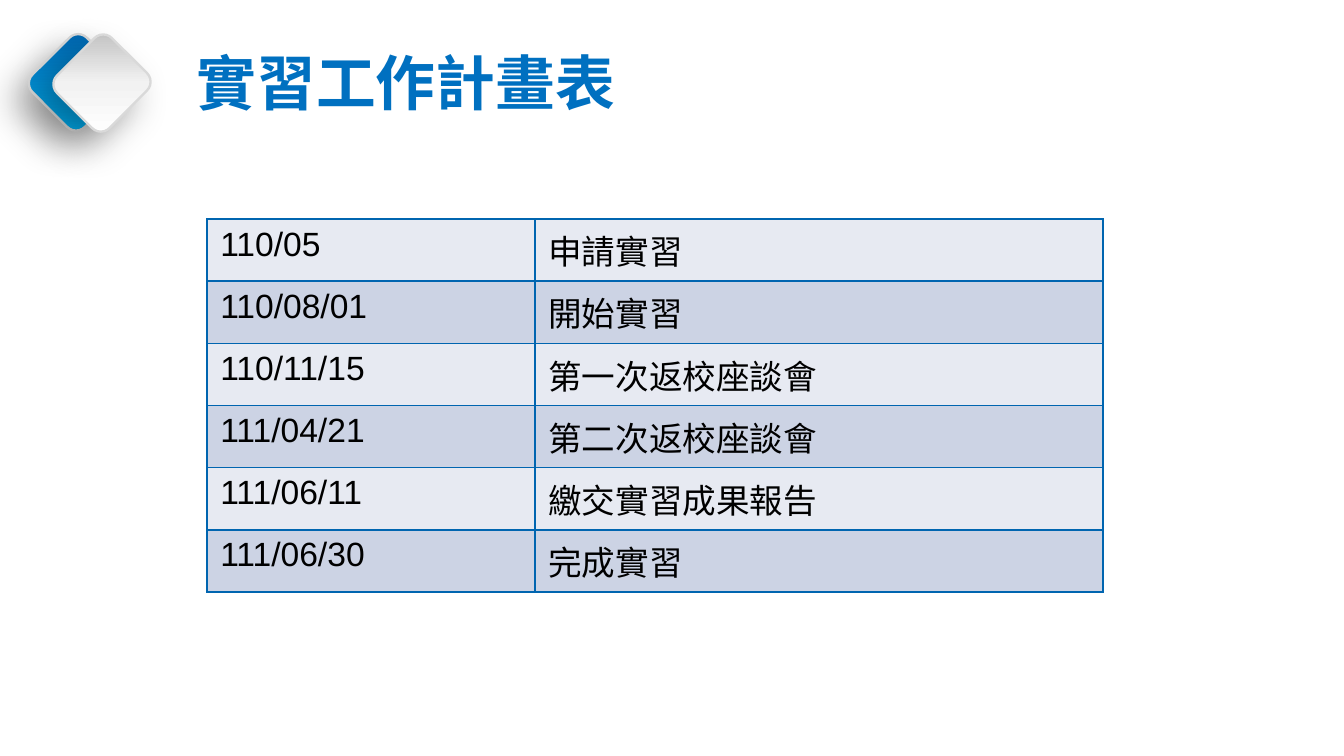
from copy import deepcopy

from lxml import etree
from pptx import Presentation
from pptx.dml.color import RGBColor
from pptx.enum.shapes import MSO_SHAPE
from pptx.enum.text import MSO_ANCHOR
from pptx.oxml.ns import qn
from pptx.util import Pt

ROUNDED = MSO_SHAPE.ROUNDED_RECTANGLE
MIDDLE = MSO_ANCHOR.MIDDLE
COLORS = {
    "blue": "0065B0", "sky": "00B0F0", "title": "0070C0",
    "white": "FFFFFF", "pale": "F2F2F2", "silver": "BFBFBF", "edge": "D9D9D9",
    "light": "E7EAF2", "dark": "CCD3E4", "black": "000000",
}
LATIN, CJK = "Arial", "Noto Sans CJK SC"
SCHEDULE = [
    ("110/05", "申請實習"),
    ("110/08/01", "開始實習"),
    ("110/11/15", "第一次返校座談會"),
    ("111/04/21", "第二次返校座談會"),
    ("111/06/11", "繳交實習成果報告"),
    ("111/06/30", "完成實習"),
]


def rgb(name):
    return RGBColor.from_string(COLORS[name])


def add_color(parent, name):
    return etree.SubElement(parent, qn("a:srgbClr"), val=COLORS[name])


class SlidePainter:
    """Draws styled elements on the current slide."""

    def __init__(self, slide):
        self.slide = slide

    def style(self, paragraph, size, color, latin, bold=False):
        for run in paragraph.runs:
            font = run.font
            font.size, font.bold, font.name = Pt(size), bold, latin
            font.color.rgb = rgb(color)
            east_asian = etree.Element(qn("a:ea"), typeface=CJK)
            run._r.rPr.find(qn("a:latin")).addnext(east_asian)

    def title(self, text, left, top, width, height):
        box = self.slide.shapes.add_textbox(Pt(left), Pt(top), Pt(width), Pt(height))
        frame = box.text_frame
        frame.word_wrap, frame.vertical_anchor = True, MIDDLE
        frame.margin_left = frame.margin_right = Pt(5.3)
        frame.margin_top = frame.margin_bottom = Pt(2.65)
        frame.text = text
        self.style(frame.paragraphs[0], 32, "title", CJK, bold=True)

    def diamond(self, left, top, width, height, stops, angle):
        shape = self.slide.shapes.add_shape(ROUNDED, Pt(left), Pt(top), Pt(width), Pt(height))
        shape.rotation = 315
        shape.line.color.rgb, shape.line.width = rgb("edge"), Pt(1.25)
        shape.fill.gradient()
        shape.fill.gradient_angle = angle
        properties = shape._element.spPr
        stop_list = properties.find(qn("a:gradFill")).find(qn("a:gsLst"))
        while len(stop_list) < len(stops):
            stop_list.append(deepcopy(stop_list[-1]))
        for stop, (position, color) in zip(shape.fill.gradient_stops, stops):
            stop.position, stop.color.rgb = position, rgb(color)
        self.shadow(shape)

    def shadow(self, shape):
        shape.shadow.inherit = False
        effects = shape._element.spPr.find(qn("a:effectLst"))
        outer = etree.SubElement(
            effects, qn("a:outerShdw"), blurRad=str(Pt(20)), dist=str(Pt(12)),
            dir=str(135 * 60000), algn="tr", rotWithShape="0")
        etree.SubElement(add_color(outer, "black"), qn("a:alpha"), val="30000")

    def cell_borders(self, cell):
        properties = cell._tc.get_or_add_tcPr()
        for index, side in enumerate(("a:lnL", "a:lnR", "a:lnT", "a:lnB")):
            border = etree.Element(qn(side), w=str(Pt(1)))
            add_color(etree.SubElement(border, qn("a:solidFill")), "blue")
            properties.insert(index, border)

    def table(self, rows, left, top, widths, row_height):
        table = self.slide.shapes.add_table(
            len(rows), len(widths), Pt(left), Pt(top),
            Pt(sum(widths)), Pt(row_height * len(rows))).table
        for column, width in zip(table.columns, widths):
            column.width = Pt(width)
        for index, (row, texts) in enumerate(zip(table.rows, rows)):
            row.height = Pt(row_height)
            for cell, text in zip(row.cells, texts):
                cell.text_frame.text = text
                self.style(cell.text_frame.paragraphs[0], 18, "black", LATIN)
                cell.fill.solid()
                cell.fill.fore_color.rgb = rgb("dark" if index % 2 else "light")
                self.cell_borders(cell)


def main():
    presentation = Presentation()
    presentation.slide_width, presentation.slide_height = Pt(720), Pt(405)
    painter = SlidePainter(presentation.slides.add_slide(presentation.slide_layouts[6]))
    painter.diamond(20.7, 24.3, 41.2, 39.6, [(0, "blue"), (1, "sky")], 225)
    painter.diamond(33.9, 24.6, 41.6, 39.8, [(0, "white"), (0.5, "pale"), (1, "silver")], 45)
    painter.title("實習工作計畫表", 100, 15.1, 464.4, 56.9)
    painter.table(SCHEDULE, 110.8, 117.4, (175.7, 304.5), 33.3)
    presentation.save("out.pptx")


if __name__ == "__main__":
    main()
